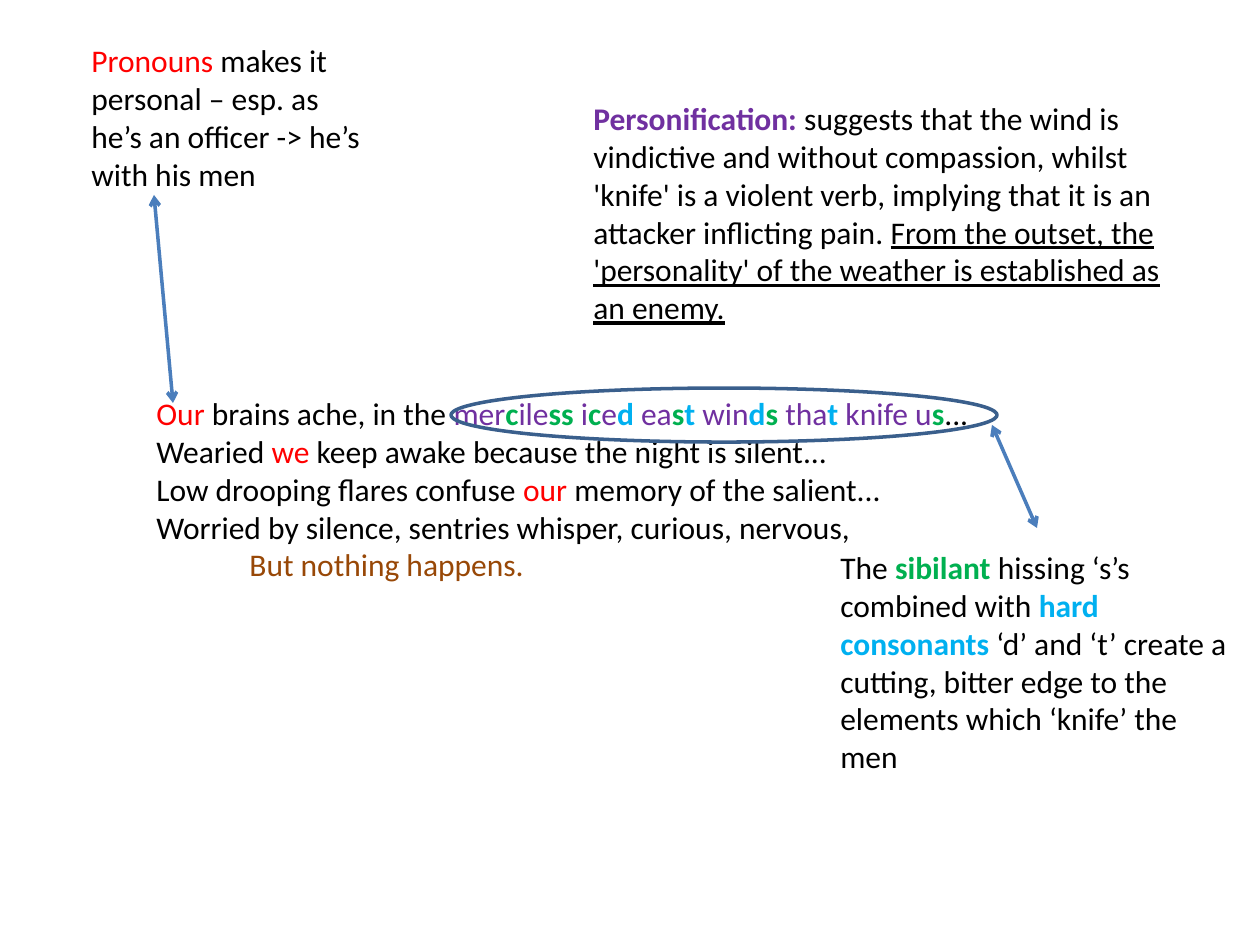
from dataclasses import dataclass

from lxml import etree
from pptx import Presentation
from pptx import util as u
from pptx.dml.color import RGBColor
from pptx.enum import shapes, text
from pptx.oxml.ns import qn

SCALE = 914400 / 126

BLACK = RGBColor(0x00, 0x00, 0x00)
RED = RGBColor(0xFF, 0x00, 0x00)
PURPLE = RGBColor(0x70, 0x30, 0xA0)
GREEN = RGBColor(0x00, 0xB0, 0x50)
CYAN = RGBColor(0x00, 0xB0, 0xF0)
BROWN = RGBColor(0x98, 0x48, 0x07)
BLUE = RGBColor(0x4B, 0x7E, 0xBC)
NAVY = RGBColor(0x3A, 0x5F, 0x8C)


@dataclass(frozen=True)
class Style:
    color: RGBColor
    bold: bool = False
    line: bool = False


PLAIN = Style(BLACK)
UNDER = Style(BLACK, line=True)
VOICE = Style(RED)
WIND = Style(PURPLE)
LABEL = Style(PURPLE, bold=True)
HISS = Style(GREEN, bold=True)
HARD = Style(CYAN, bold=True)
CLOSE = Style(BROWN)

Run = tuple[str, Style]


@dataclass(frozen=True)
class Para:
    runs: list[Run]
    indent: int = 0


@dataclass(frozen=True)
class Note:
    box: tuple[int, int, int, int]
    paras: list[Para]


@dataclass(frozen=True)
class Arrow:
    start: tuple[int, int]
    end: tuple[int, int]


POEM = Note((144, 388, 853, 204), [
    Para([
        ("Our", VOICE), (" brains ache, in the ", PLAIN),
        ("mer", WIND), ("c", HISS), ("ile", WIND), ("ss", HISS),
        (" i", WIND), ("c", HISS), ("e", WIND), ("d", HARD),
        (" ea", WIND), ("s", HISS), ("t", HARD),
        (" win", WIND), ("d", HARD), ("s", HISS),
        (" tha", WIND), ("t", HARD), (" knife u", WIND), ("s", HISS),
        ("...\nWearied ", PLAIN), ("we", VOICE),
        (" keep awake because the night is silent...\n"
         "Low drooping flares confuse ", PLAIN),
        ("our", VOICE),
        (" memory of the salient...\n"
         "Worried by silence, sentries whisper, curious, nervous,", PLAIN),
    ]),
    Para([("But nothing happens.", CLOSE)], indent=93),
])

NOTES = [
    Note((79, 35, 307, 165), [Para([
        ("Pronouns", VOICE),
        (" makes it personal – esp. as he’s an officer -> "
         "he’s with his men", PLAIN),
    ])]),
    Note((581, 93, 630, 242), [Para([
        ("Personification: ", LABEL),
        ("suggests that the wind is vindictive and without compassion, "
         "whilst 'knife' is a violent verb, implying that it is an "
         "attacker inflicting pain. ", PLAIN),
        ("From the outset, the 'personality' of the weather is "
         "established as an enemy.", UNDER),
    ])]),
    Note((828, 542, 417, 242), [Para([
        ("The ", PLAIN), ("sibilant ", HISS),
        ("hissing ‘s’s combined with ", PLAIN),
        ("hard consonants", HARD),
        (" ‘d’ and ‘t’ create a cutting, bitter edge to the elements "
         "which ‘knife’ the men", PLAIN),
    ])]),
]

RING = (451, 388, 546, 54)
ARROWS = [Arrow((154, 195), (173, 403)), Arrow((992, 425), (1037, 528))]


def emu(px: int) -> int:
    return round(px * SCALE)


def apply(target, values: dict) -> None:
    for name, value in values.items():
        setattr(target, name, value)


def add_run(para, words: str, style: Style) -> None:
    for i, part in enumerate(words.split("\n")):
        if i:
            para.add_line_break()
        run = para.add_run()
        run.text = part
        apply(run.font, {"name": "Calibri", "size": u.Pt(18),
                         "bold": style.bold, "underline": style.line})
        run.font.color.rgb = style.color


def add_note(slide, note: Note) -> None:
    frame = slide.shapes.add_textbox(*map(emu, note.box)).text_frame
    apply(frame, {"word_wrap": True,
                  "auto_size": text.MSO_AUTO_SIZE.SHAPE_TO_FIT_TEXT})
    for i, item in enumerate(note.paras):
        para = frame.add_paragraph() if i else frame.paragraphs[0]
        if item.indent:
            para._p.get_or_add_pPr().set("marL", str(emu(item.indent)))
        for words, style in item.runs:
            add_run(para, words, style)


def add_ring(slide, box: tuple[int, int, int, int]) -> None:
    ring = slide.shapes.add_shape(shapes.MSO_SHAPE.OVAL, *map(emu, box))
    ring.shadow.inherit = False
    ring.fill.background()
    ring.line.color.rgb = NAVY
    ring.line.width = u.Pt(2)


def add_arrow(slide, arrow: Arrow) -> None:
    line = slide.shapes.add_connector(
        shapes.MSO_CONNECTOR.STRAIGHT, *map(emu, arrow.start + arrow.end))
    line.line.color.rgb = BLUE
    line.line.width = u.Pt(2)
    props = line._element.spPr
    stroke = props.find(qn("a:ln"))
    for end in ("a:headEnd", "a:tailEnd"):
        etree.SubElement(stroke, qn(end)).set("type", "arrow")
    etree.SubElement(props, qn("a:effectLst"))


def main() -> None:
    deck = Presentation()
    apply(deck, {"slide_width": emu(1260), "slide_height": emu(945)})
    slide = deck.slides.add_slide(deck.slide_layouts[6])
    add_note(slide, POEM)
    for note in NOTES:
        add_note(slide, note)
    add_ring(slide, RING)
    for arrow in ARROWS:
        add_arrow(slide, arrow)
    deck.save("out.pptx")


if __name__ == "__main__":
    main()
